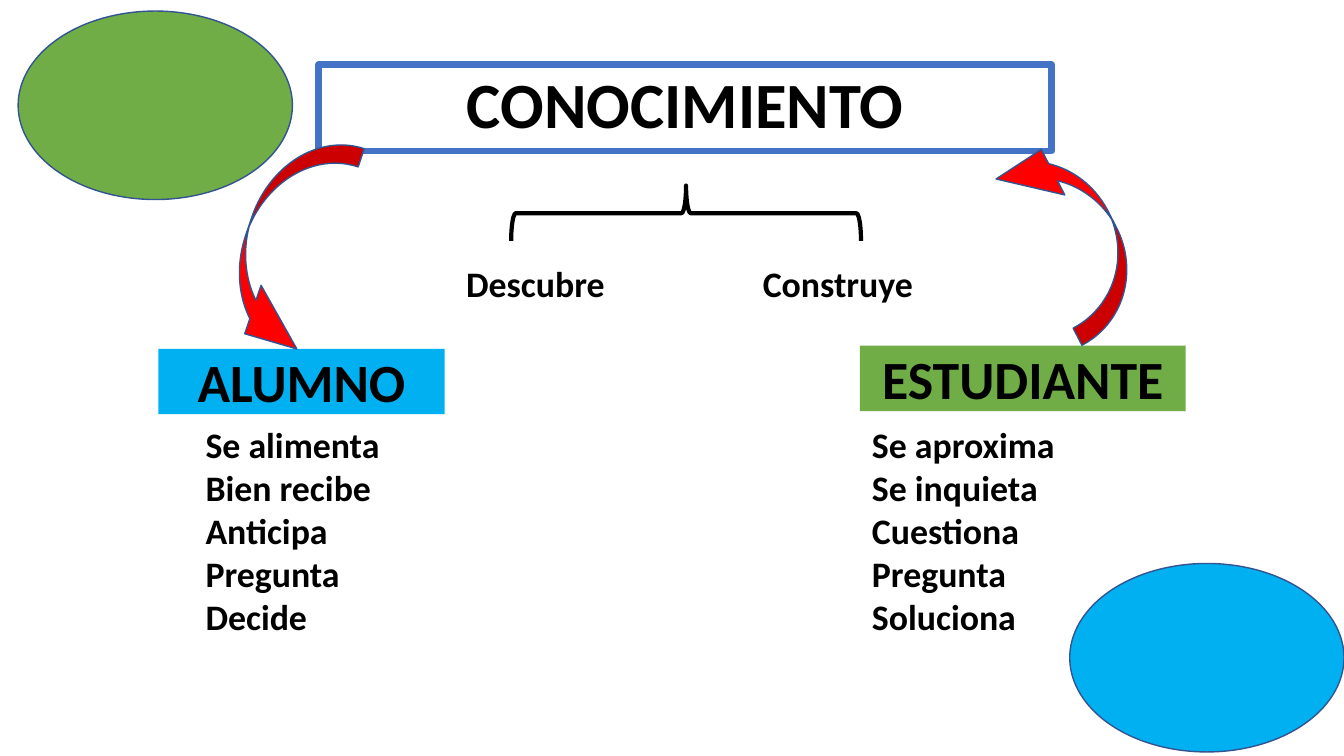
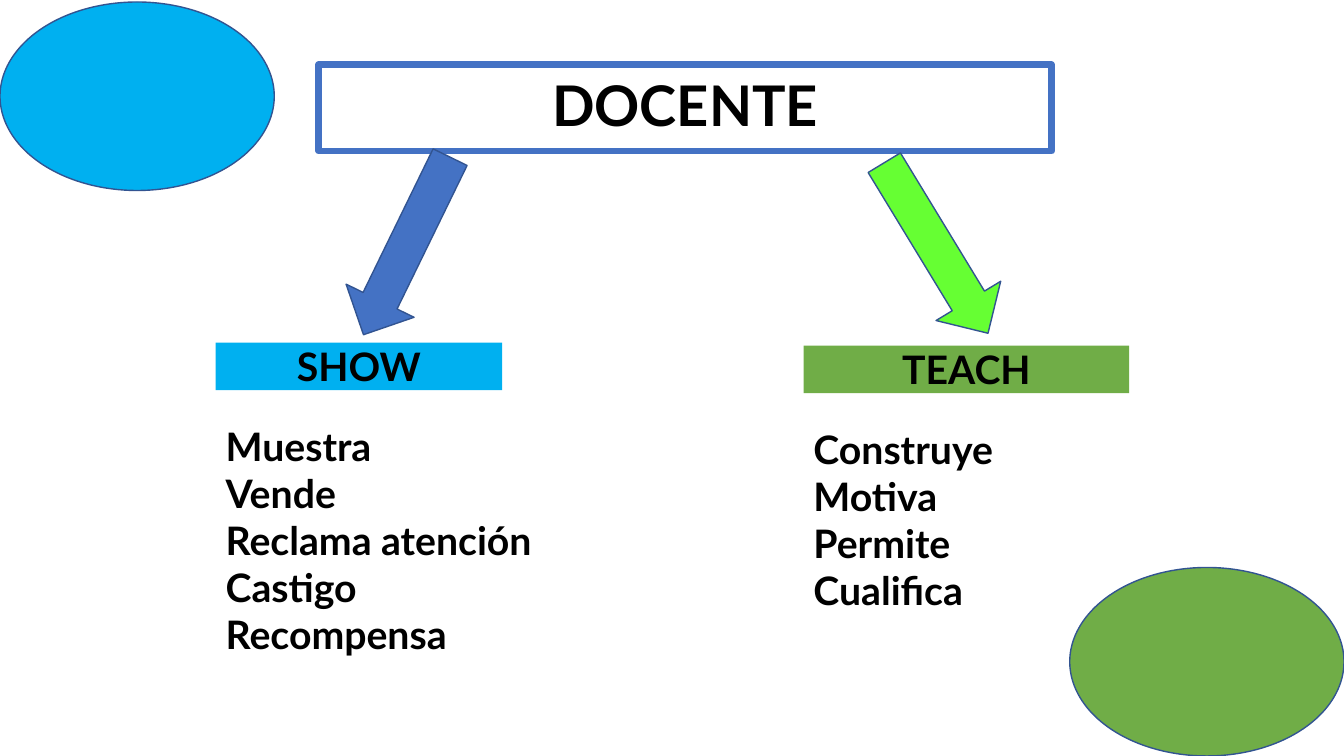
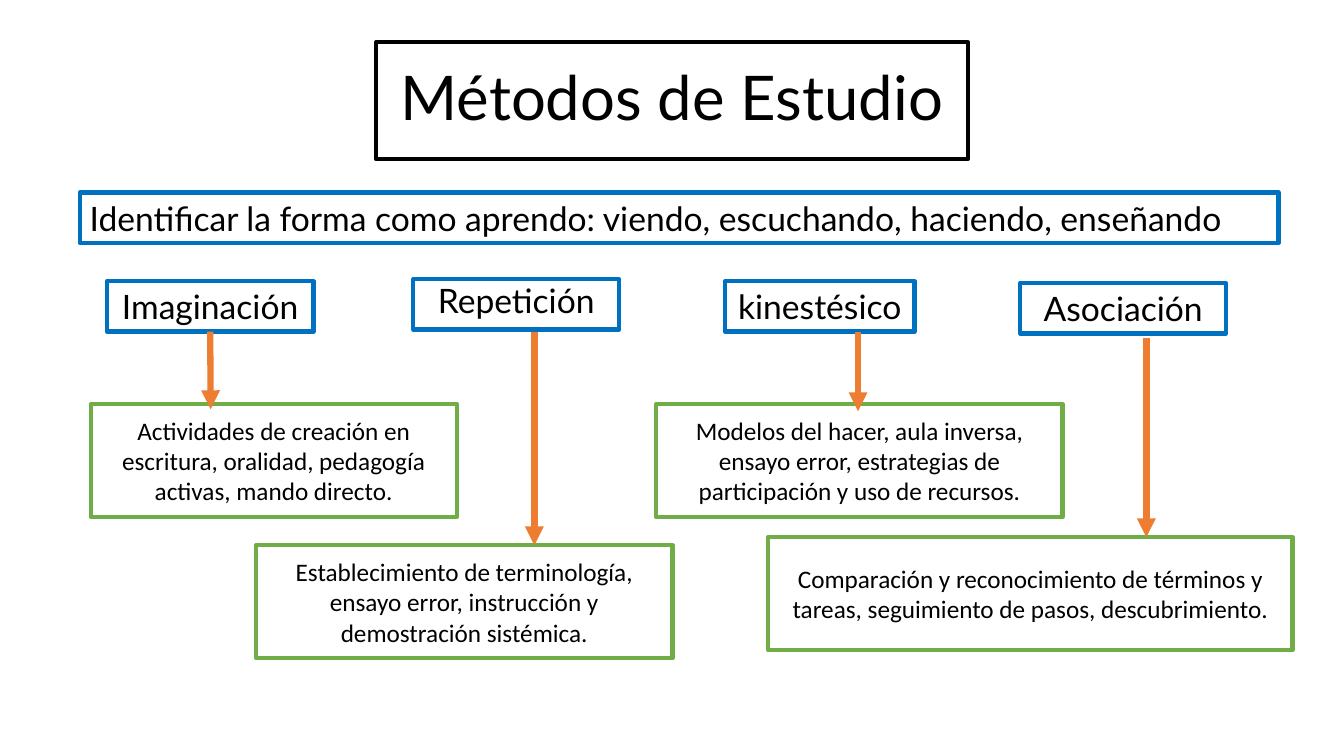
from lxml import etree
from pptx import Presentation
from pptx import util as u
from pptx.dml.color import RGBColor
from pptx.enum import shapes, text
from pptx.oxml import ns

BLACK = RGBColor(0x00, 0x00, 0x00)
WHITE = RGBColor(0xFF, 0xFF, 0xFF)
BLUE = RGBColor(0x44, 0x72, 0xC4)
EDGE_BLUE = RGBColor(0x32, 0x54, 0x91)
FRAME_BLUE = RGBColor(0x00, 0x70, 0xC0)
SKY = RGBColor(0x00, 0xB0, 0xF0)
GREEN = RGBColor(0x70, 0xAD, 0x47)
LIME = RGBColor(0x66, 0xFF, 0x33)
RED = RGBColor(0xFF, 0x00, 0x00)
ORANGE = RGBColor(0xED, 0x7D, 0x31)

SHAPE = shapes.MSO_SHAPE
LEFT, CENTER = text.PP_ALIGN.LEFT, text.PP_ALIGN.CENTER
TOP, MIDDLE = text.MSO_ANCHOR.TOP, text.MSO_ANCHOR.MIDDLE
TITLE_ONLY, TITLE_AND_BODY = 5, 1
TITLE_BOX = (3.16, 0.64, 7.27, 0.86)
OVAL_SIZE = (2.72, 1.87)


def inches(values):
    return [u.Inches(value) for value in values]


def paint(shape, fill=None, line=None, width=1):
    """Set fill and outline; None means none."""
    if fill is None:
        shape.fill.background()
    else:
        shape.fill.solid()
        shape.fill.fore_color.rgb = fill
    if line is None:
        shape.line.fill.background()
    else:
        shape.line.color.rgb = line
        shape.line.width = u.Pt(width)


def write(shape, lines, size, font, bold=False, align=CENTER, anchor=TOP,
          spacing=1.0, inset=None):
    """Fill a shape with one paragraph for each line."""
    frame = shape.text_frame
    frame.text = "\n".join(lines)
    frame.word_wrap = True
    frame.auto_size = text.MSO_AUTO_SIZE.NONE
    frame.vertical_anchor = anchor
    if inset is not None:
        frame.margin_left = frame.margin_right = u.Inches(inset)
        frame.margin_top = frame.margin_bottom = u.Inches(inset)
    for paragraph in frame.paragraphs:
        paragraph.alignment = align
        paragraph.line_spacing = spacing
        paragraph.space_before = u.Pt(0)
        for run in paragraph.runs:
            run.font.size = u.Pt(size)
            run.font.name = font
            run.font.bold = bold
            run.font.color.rgb = BLACK


def place(shape, box):
    shape.left, shape.top, shape.width, shape.height = inches(box)


def add_shape(slide, kind, box, fill=None, line=None, width=1, rotation=0):
    shape = slide.shapes.add_shape(kind, *inches(box))
    shape.shadow.inherit = False
    shape.rotation = rotation
    paint(shape, fill, line, width)
    return shape


def add_text(slide, box, lines, size, font, **style):
    textbox = slide.shapes.add_textbox(*inches(box))
    write(textbox, lines, size, font, **style)
    return textbox


def add_title(slide, box, title, size, font, fill, line, width, bold):
    shape = slide.shapes.title
    place(shape, box)
    paint(shape, fill, line, width)
    write(shape, [title], size, font, bold=bold, anchor=MIDDLE, spacing=0.9)


# Concept slides: framed title, two headed lists, two corner ovals
def add_concept_slide(presentation, title, size, font, ovals):
    slide = presentation.slides.add_slide(presentation.slide_layouts[TITLE_ONLY])
    add_title(slide, TITLE_BOX, title, size, font, WHITE, BLUE, 4.5, True)
    for corner, color in ovals:
        add_shape(slide, SHAPE.OVAL, corner + OVAL_SIZE, color, EDGE_BLUE)
    return slide


def add_headed_list(slide, box, fill, heading, items, sizes, font, list_box):
    """list_box is an offset from the heading, then a width and a height."""
    bar = add_shape(slide, SHAPE.RECTANGLE, box, fill)
    write(bar, [heading], sizes[0], font, bold=True, inset=0)
    right, down, width, height = list_box
    add_text(slide, (box[0] + right, box[1] + down, width, height), items,
             sizes[1], font, bold=True, align=LEFT)


def build_knowledge(presentation):
    slide = add_concept_slide(presentation, "CONOCIMIENTO", 46.1, "Calibri",
                              [((0.18, 0.11), GREEN), ((10.61, 5.59), SKY)])
    sizes = (38.4, 25.6)
    add_headed_list(slide, (1.57, 3.46, 2.84, 0.65), SKY, "ALUMNO",
                    ["Se alimenta", "Bien recibe", "Anticipa", "Pregunta", "Decide"],
                    sizes, "Calibri", (0.37, 0.68, 2.84, 2.26))
    add_headed_list(slide, (8.53, 3.43, 3.23, 0.65), GREEN, "ESTUDIANTE",
                    ["Se aproxima", "Se inquieta", "Cuestiona", "Pregunta", "Soluciona"],
                    sizes, "Calibri", (0.02, 0.71, 2.84, 2.26))

    # Curved arrows between the title and the headings
    for box, rotation, head in [((2.42, 1.28, 0.84, 2.35), 18.6, 0.64),
                                ((10.2, 1.24, 0.84, 2.11), 152.7, 0.634)]:
        arrow = add_shape(slide, SHAPE.CURVED_RIGHT_ARROW, box, RED, EDGE_BLUE,
                          rotation=rotation)
        for index, value in enumerate((0.227, 0.604, head)):
            arrow.adjustments[index] = value

    # Brace and its two verbs
    add_shape(slide, SHAPE.RIGHT_BRACE, (6.53, 0.38, 0.55, 3.47), None, BLACK, 3,
              rotation=270)
    for left, verb in [(4.2, "Descubre"), (7.2, "Construye")]:
        add_text(slide, (left, 2.55, 2.22, 0.53), [verb], 25.6, "Calibri", bold=True)


def build_teacher(presentation):
    slide = add_concept_slide(presentation, "DOCENTE", 40, "Lato",
                              [((0, 0.02), SKY), ((10.61, 5.63), GREEN)])
    sizes = (28, 28)
    add_headed_list(slide, (2.14, 3.4, 2.84, 0.47), SKY, "SHOW",
                    ["Muestra", "Vende", "Reclama atención", "Castigo", "Recompensa"],
                    sizes, "Lato", (0, 0.74, 3.31, 2.93))
    add_headed_list(slide, (7.97, 3.43, 3.23, 0.47), GREEN, "TEACH",
                    ["Construye", "Motiva", "Permite", "Cualifica"],
                    sizes, "Lato", (0, 0.74, 2.84, 1.99))
    for box, color, rotation in [((3.66, 1.46, 0.75, 1.96), BLUE, 26),
                                 ((8.91, 1.47, 0.75, 1.98), LIME, 328.7)]:
        add_shape(slide, SHAPE.DOWN_ARROW, box, color, EDGE_BLUE, rotation=rotation)


# Study methods: each has a label, an arrow and a description
def add_label(slide, box, label, align=CENTER):
    shape = add_text(slide, box, [label], 24, "Lato", align=align)
    paint(shape, None, FRAME_BLUE, 3)
    return shape


def add_body_label(slide, box, label):
    """Use the body placeholder as a label without bullet."""
    body = slide.placeholders[1]
    place(body, box)
    paint(body, None, FRAME_BLUE, 3)
    write(body, [label], 24, "Lato", spacing=0.9)
    properties = body.text_frame.paragraphs[0]._p.get_or_add_pPr()
    properties.set("marL", "0")
    properties.set("indent", "0")
    etree.SubElement(properties, ns.qn("a:buNone"))
    return body


def add_arrow(slide, x, top, bottom):
    arrow = slide.shapes.add_connector(shapes.MSO_CONNECTOR.STRAIGHT,
                                       *inches((x, top, x, bottom)))
    arrow.line.color.rgb = ORANGE
    arrow.line.width = u.Pt(4.5)
    etree.SubElement(arrow.line._get_or_add_ln(), ns.qn("a:tailEnd"), type="triangle")
    etree.SubElement(arrow._element.spPr, ns.qn("a:effectLst"))
    return arrow


def add_description(slide, box, description):
    shape = add_shape(slide, SHAPE.RECTANGLE, box, WHITE, GREEN, 3)
    write(shape, [description], 18, "Calibri", anchor=MIDDLE)


def build_methods(presentation):
    slide = presentation.slides.add_slide(presentation.slide_layouts[TITLE_AND_BODY])
    add_title(slide, (3.73, 0.42, 5.87, 1.16), "Métodos de Estudio", 44, "Lato",
              None, BLACK, 3, False)
    add_label(slide, (0.79, 1.91, 11.89, 0.5),
              "Identificar la forma como aprendo: viendo, escuchando, haciendo, enseñando",
              LEFT)

    imagination = add_label(slide, (1.06, 2.79, 2.05, 0.5), "Imaginación")
    add_body_label(slide, (4.1, 2.77, 2.04, 0.5), "Repetición")
    add_label(slide, (7.19, 2.79, 1.88, 0.5), "kinestésico")
    add_label(slide, (10.12, 2.81, 2.04, 0.5), "Asociación")

    descriptions = [
        ((0.9, 4.01, 3.63, 1.12), "Actividades de creación en escritura, oralidad, "
                                  "pedagogía activas, mando directo."),
        ((2.54, 5.41, 4.13, 1.12), "Establecimiento de terminología, ensayo error, "
                                   "instrucción y demostración sistémica."),
        ((6.51, 4.01, 4.03, 1.12), "Modelos del hacer, aula inversa, ensayo error, "
                                   "estrategias de participación y uso de recursos."),
        ((7.62, 5.33, 5.2, 1.12), "Comparación y reconocimiento de términos y tareas, "
                                  "seguimiento de pasos, descubrimiento."),
    ]
    for box, description in descriptions:
        add_description(slide, box, description)

    add_arrow(slide, 2.09, 3.29, 4.06).begin_connect(imagination, 2)
    for x, top, bottom in [(5.3, 3.29, 5.41), (8.51, 3.29, 4.08), (11.37, 3.35, 5.33)]:
        add_arrow(slide, x, top, bottom)


def main():
    presentation = Presentation()
    presentation.slide_width = u.Inches(13.33)
    presentation.slide_height = u.Inches(7.5)
    build_knowledge(presentation)
    build_teacher(presentation)
    build_methods(presentation)
    presentation.save("out.pptx")


if __name__ == "__main__":
    main()
